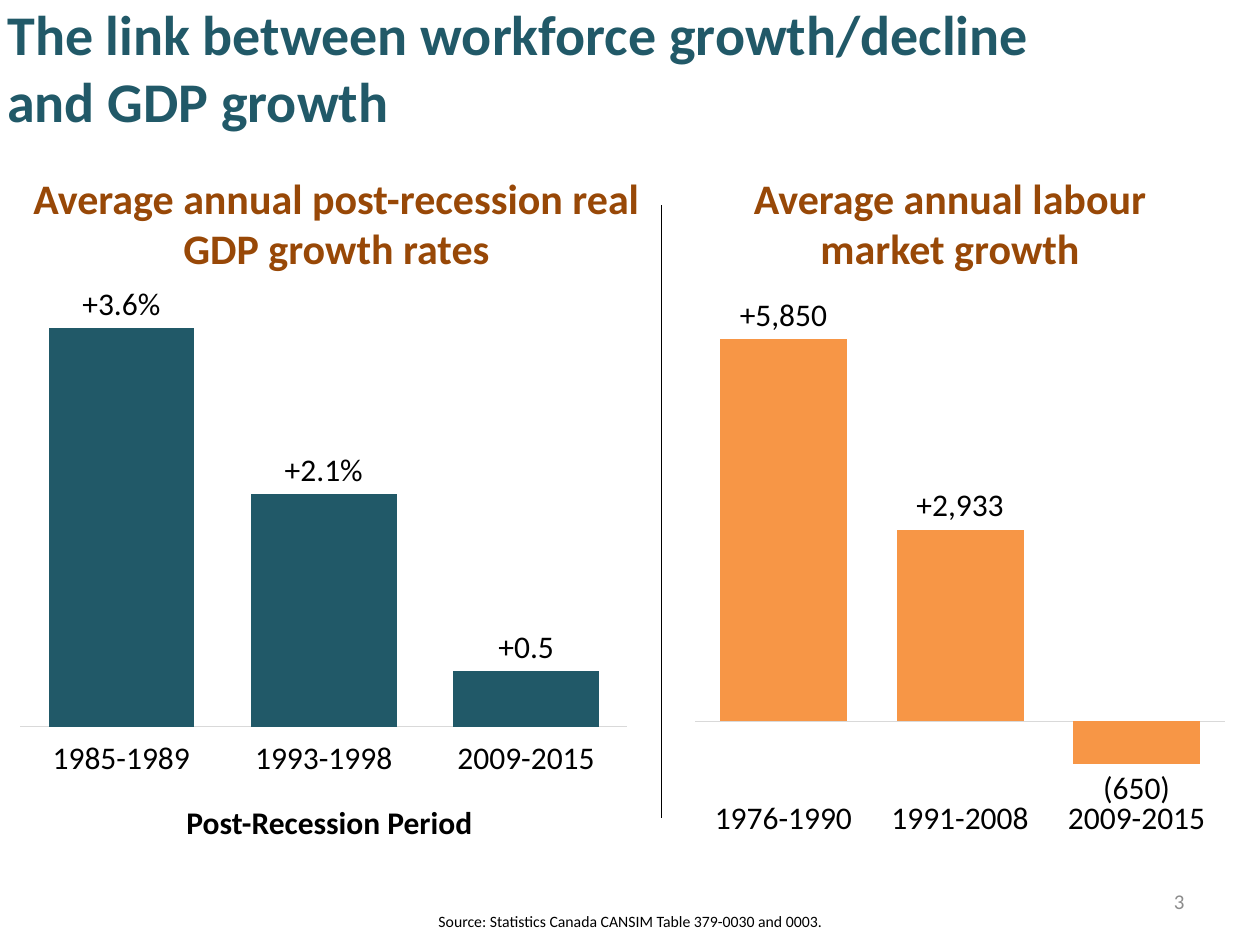
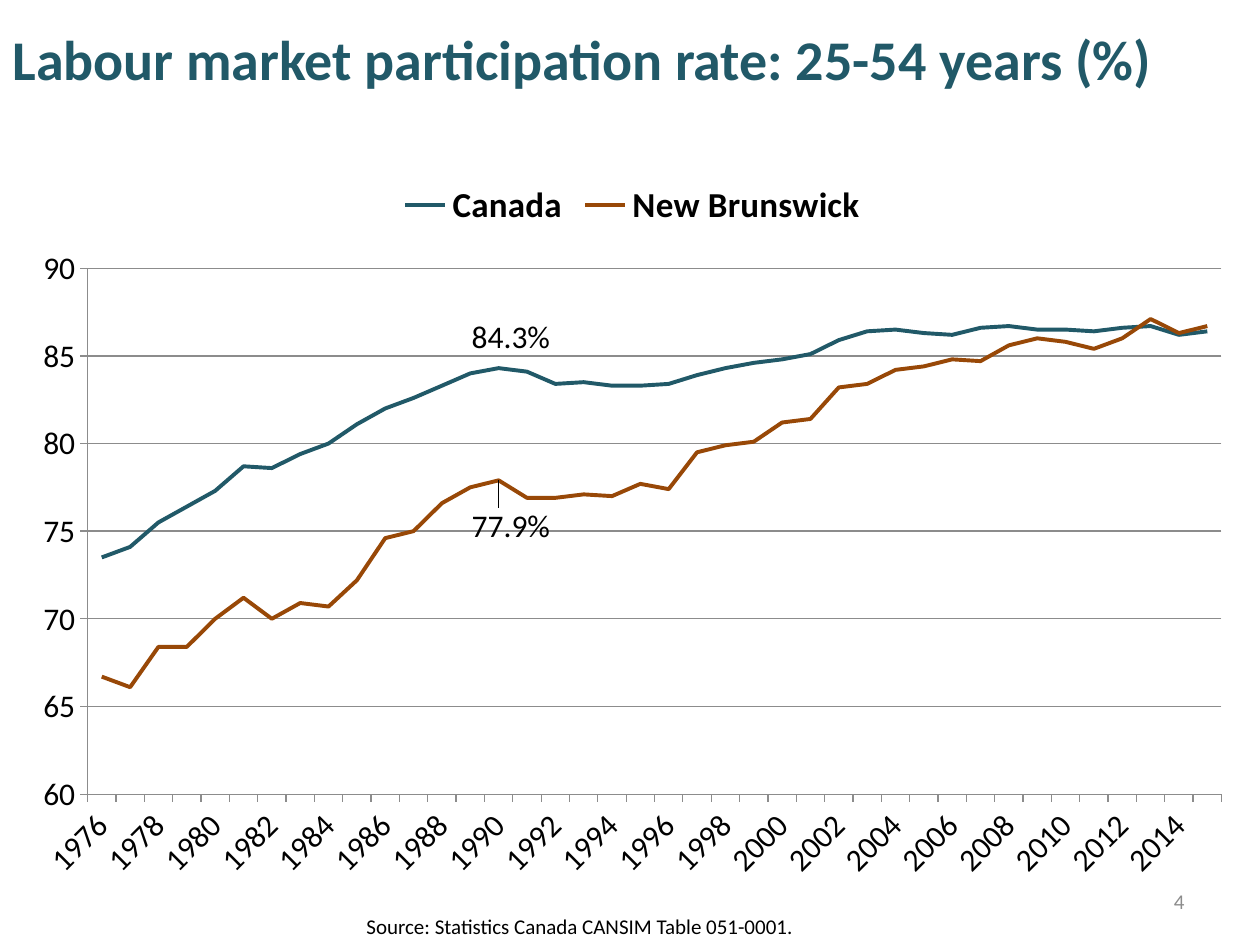
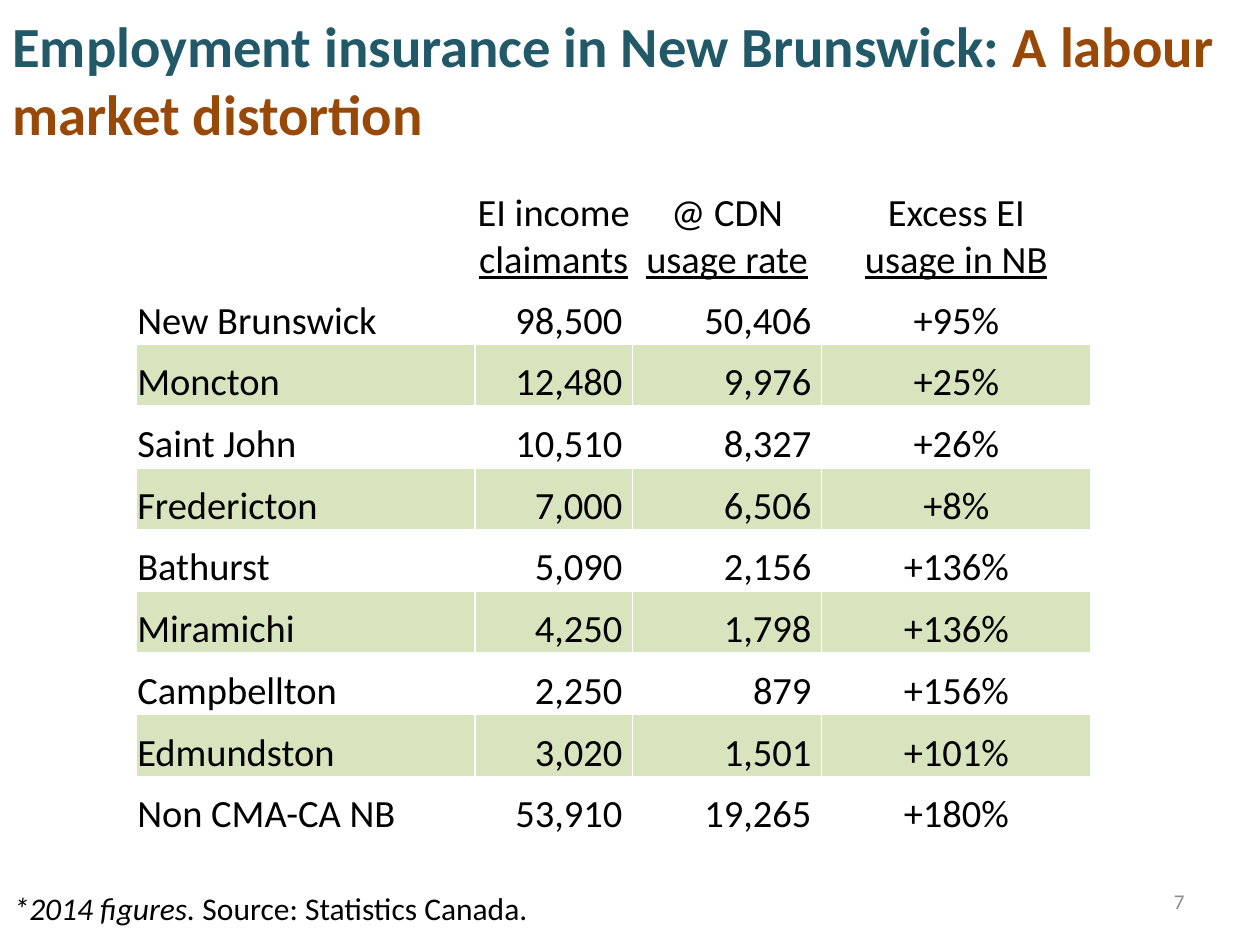
import pptx
import pptx.chart.data
import pptx.dml.color
import pptx.enum.chart
import pptx.enum.shapes
import pptx.enum.text
import pptx.oxml
import pptx.oxml.ns
import pptx.util

Inches = pptx.util.Inches
Pt = pptx.util.Pt
RGBColor = pptx.dml.color.RGBColor
Align = pptx.enum.text.PP_ALIGN
Anchor = pptx.enum.text.MSO_ANCHOR
Kind = pptx.enum.chart.XL_CHART_TYPE
Place = pptx.enum.chart.XL_LABEL_POSITION
Tick = pptx.enum.chart.XL_TICK_MARK

TEAL = RGBColor(0x21, 0x59, 0x68)
RUST = RGBColor(0x98, 0x48, 0x07)
ORANGE = RGBColor(0xF7, 0x96, 0x46)
GREEN = RGBColor(0xD7, 0xE4, 0xBD)
BLACK = RGBColor(0, 0, 0)
GREY = RGBColor(0x8C, 0x8C, 0x8C)
PALE = RGBColor(0xD9, 0xD9, 0xD9)
FONT = "Calibri"
TIGHT = (0.07, 0.04)
LOOSE = (0.1, 0.05)

CANADA = [73.5, 74.1, 75.5, 76.4, 77.3, 78.7, 78.6, 79.4, 80, 81.1,
          82, 82.6, 83.3, 84, 84.3, 84.1, 83.4, 83.5, 83.3, 83.3,
          83.4, 83.9, 84.3, 84.6, 84.8, 85.1, 85.9, 86.4, 86.5, 86.3,
          86.2, 86.6, 86.7, 86.5, 86.5, 86.4, 86.6, 86.7, 86.2, 86.4]
BRUNSWICK = [66.7, 66.1, 68.4, 68.4, 70, 71.2, 70, 70.9, 70.7, 72.2,
             74.6, 75, 76.6, 77.5, 77.9, 76.9, 76.9, 77.1, 77, 77.7,
             77.4, 79.5, 79.9, 80.1, 81.2, 81.4, 83.2, 83.4, 84.2, 84.4,
             84.8, 84.7, 85.6, 86, 85.8, 85.4, 86, 87.1, 86.3, 86.7]

# Each header cell lists its paragraphs, and each paragraph its (text, underline) runs.
HEADS = [
    [],
    [[("EI income ", False), ("claimants", True)]],
    [[("@ CDN ", False), ("usage rate", True)]],
    [[("Excess EI", False)], [("usage in NB", True)]],
]
CLAIMS = [
    ("New Brunswick", "98,500", "50,406", "+95%"),
    ("Moncton", "12,480", "9,976", "+25%"),
    ("Saint John", "10,510", "8,327", "+26%"),
    ("Fredericton", "7,000", "6,506", "+8%"),
    ("Bathurst", "5,090", "2,156", "+136%"),
    ("Miramichi", "4,250", "1,798", "+136%"),
    ("Campbellton", "2,250", "879", "+156%"),
    ("Edmundston", "3,020", "1,501", "+101%"),
    ("Non CMA-CA NB", "53,910", "19,265", "+180%"),
]


def xml(tag, inner="", attrs=""):
    """Make an element with the drawing and chart prefixes declared."""
    names = pptx.oxml.ns.nsdecls("a", "c")
    return pptx.oxml.parse_xml(f"<{tag} {names} {attrs}>{inner}</{tag}>")


def layout(**parts):
    """Make a manual chart layout from x, y, w and h fractions."""
    inner = "".join(f'<c:{key} val="{val}"/>' for key, val in parts.items())
    return xml("c:layout", f"<c:manualLayout>{inner}</c:manualLayout>")


def style(font, size, color=BLACK, **flags):
    font.name = FONT
    font.size = Pt(size)
    font.color.rgb = color
    for name, value in flags.items():
        setattr(font, name, value)


def write(para, text, size, color=BLACK, **flags):
    run = para.add_run()
    run.text = text
    style(run.font, size, color, **flags)


def note(series, index, text, place):
    """Give one chart point its own label text."""
    label = series.points[index].data_label
    write(label.text_frame.paragraphs[0], text, 18)
    label.position = place


def edge(cell):
    """Draw white one-point borders round a cell."""
    props = cell._tc.get_or_add_tcPr()
    white = '<a:solidFill><a:srgbClr val="FFFFFF"/></a:solidFill>'
    for spot, side in enumerate("LRTB"):
        props.insert(spot, xml(f"a:ln{side}", white, 'w="12700"'))


class Deck:
    def __init__(self):
        self.show = pptx.Presentation()
        self.show.slide_width = Inches(10)
        self.show.slide_height = Inches(7.5)

    def page(self, number, at, runs, size=32):
        """Start a slide with its title and its page number."""
        self.slide = self.show.slides.add_slide(self.show.slide_layouts[6])
        self.text(at, [(text, size, color, {"bold": True}) for text, color in runs],
                  anchor=Anchor.MIDDLE)
        self.text((7.17, 6.95, 2.33, 0.4), [(number, 12, GREY, {})],
                  Align.RIGHT, Anchor.MIDDLE)

    def text(self, at, runs, align=Align.LEFT, anchor=Anchor.TOP, pad=LOOSE, wrap=True):
        frame = self.slide.shapes.add_textbox(*map(Inches, at)).text_frame
        frame.word_wrap = wrap
        frame.vertical_anchor = anchor
        frame.margin_left = frame.margin_right = Inches(pad[0])
        frame.margin_top = frame.margin_bottom = Inches(pad[1])
        para = frame.paragraphs[0]
        para.alignment = align
        for text, size, color, flags in runs:
            write(para, text, size, color, **flags)

    def rule(self, x, top, end):
        line = self.slide.shapes.add_connector(
            pptx.enum.shapes.MSO_CONNECTOR.STRAIGHT, *map(Inches, (x, top, x, end)))
        line.line.color.rgb = BLACK
        line.line.width = Pt(0.75)
        line._element.spPr.append(xml("a:effectLst"))

    def chart(self, kind, at, cats, rows):
        data = pptx.chart.data.CategoryChartData()
        data.categories = cats
        for name, values in rows:
            data.add_series(name, values)
        chart = self.slide.shapes.add_chart(kind, *map(Inches, at), data).chart
        chart.has_title = False
        chart.has_legend = False
        style(chart.font, 18)
        for axis in (chart.category_axis, chart.value_axis):
            style(axis.tick_labels.font, 18)
        return chart

    def bars(self, at, cats, values, color, form, notes, low, high):
        chart = self.chart(Kind.COLUMN_CLUSTERED, at, cats, [("Series 1", values)])
        plot = chart.plots[0]
        plot.gap_width = 39
        plot.overlap = -27
        plot.vary_by_categories = False
        base = chart.category_axis
        base.major_tick_mark = Tick.NONE
        base.tick_label_position = pptx.enum.chart.XL_TICK_LABEL_POSITION.LOW
        base.format.line.color.rgb = PALE
        base.format.line.width = Pt(0.75)
        scale = chart.value_axis
        scale.visible = False
        scale.has_major_gridlines = False
        scale.minimum_scale = low
        scale.maximum_scale = high
        series = plot.series[0]
        series.invert_if_negative = False
        series.format.fill.solid()
        series.format.fill.fore_color.rgb = color
        labels = series.data_labels
        labels.show_value = True
        labels.number_format = form
        labels.number_format_is_linked = False
        labels.position = Place.OUTSIDE_END
        style(labels.font, 18)
        for index, text in enumerate(notes):
            note(series, index, text, Place.OUTSIDE_END)

    def lines(self, at, cats, rows, peaks):
        """Draw a line chart; peaks holds index, text, place and shift per series."""
        chart = self.chart(Kind.LINE, at, cats, [row[:2] for row in rows])
        chart.plots[0].vary_by_categories = False
        chart.has_legend = True
        chart.legend.position = pptx.enum.chart.XL_LEGEND_POSITION.TOP
        chart.legend.include_in_layout = False
        style(chart.legend.font, 20, bold=True)
        scale = chart.value_axis
        scale.minimum_scale = 60
        scale.maximum_scale = 90
        scale.major_unit = 5
        scale.has_major_gridlines = True
        base = chart.category_axis
        base._element.txPr.bodyPr.set("rot", "-2700000")
        for axis in (base, scale):
            axis.major_tick_mark = Tick.OUTSIDE
            axis.format.line.color.rgb = GREY
        scale.major_gridlines.format.line.color.rgb = GREY
        area = chart._chartSpace.chart.plotArea
        for old in area.findall(pptx.oxml.ns.qn("c:layout")):
            area.remove(old)
        inner = layout(layoutTarget="inner", xMode="edge", yMode="edge",
                       x=0.056, y=0.139, w=0.924, h=0.726)
        area.insert(0, inner)
        for series, row, peak in zip(chart.plots[0].series, rows, peaks):
            series.smooth = False
            series.format.line.color.rgb = row[2]
            series.data_labels.show_value = False
            index, text, place, shift = peak
            note(series, index, text, place)
            group = series.data_labels._element
            group.find(pptx.oxml.ns.qn("c:dLbl")).insert(1, layout(x=0.01, y=shift))
            group.append(xml(
                "c:extLst",
                '<c:ext uri="{CE6537A1-D6FC-4f65-9D91-7224C49458BB}" '
                'xmlns:c15="http://schemas.microsoft.com/office/drawing/2012/chart">'
                '<c15:showLeaderLines val="1"/></c:ext>'))

    def table(self, at, widths, heads, rows, aligns):
        table = self.slide.shapes.add_table(
            len(rows) + 1, len(widths), *map(Inches, at)).table
        table.first_row = False
        table.horz_banding = False
        for col, width in zip(table.columns, widths):
            col.width = Inches(width)
        for index, row in enumerate(table.rows):
            row.height = Inches(0.49 if index else 0.74)
        plain = [[[[(text, False)]] for text in row] for row in rows]
        for index, row in enumerate([heads] + plain):
            for col, paras in enumerate(row):
                align = aligns[col] if index else Align.CENTER
                shade = index > 0 and index % 2 == 0
                self.cell(table.cell(index, col), paras, align, shade)

    def cell(self, cell, paras, align, shade):
        cell.vertical_anchor = Anchor.BOTTOM
        cell.margin_left = cell.margin_top = Inches(0.01)
        cell.margin_right = Inches(0.08 if align == Align.RIGHT else 0.01)
        cell.margin_bottom = 0
        if shade:
            cell.fill.solid()
            cell.fill.fore_color.rgb = GREEN
        else:
            cell.fill.background()
        edge(cell)
        frame = cell.text_frame
        for index, runs in enumerate(paras):
            para = frame.add_paragraph() if index else frame.paragraphs[0]
            para.alignment = align
            for text, under in runs:
                write(para, text, 22, underline=under)


def growth(deck):
    deck.page("3", (-0.04, -0.06, 8.33, 1.18),
              [("The link between workforce growth/decline and GDP growth", TEAL)])
    deck.text((3.39, 7.2, 3.22, 0.23),
              [("Source: Statistics Canada CANSIM Table 379-0030 and 0003.", 9, BLACK, {})],
              Align.CENTER, pad=TIGHT, wrap=False)
    deck.text((1.41, 6.33, 2.44, 0.38),
              [("Post-Recession Period", 18, BLACK, {"bold": True})],
              pad=TIGHT, wrap=False)
    for left, width, text in (
            (0.09, 5.16, "Average annual post-recession real GDP growth rates"),
            (5.43, 4.22, "Average annual labour market growth")):
        deck.text((left, 1.33, width, 0.88), [(text, 24, RUST, {"bold": True})],
                  Align.CENTER, pad=TIGHT)
    deck.rule(5.25, 1.63, 6.49)
    deck.bars((5.43, 2, 4.38, 4.74), ["1976-1990", "1991-2008", "2009-2015"],
              [5850, 2933, -650], ORANGE, "#,##0;(#,##0)",
              ["+5,850", "+2,933"], -1000, 7000)
    deck.bars((0.06, 2.17, 5.02, 4.08), ["1985-1989", "1993-1998", "2009-2015"],
              [0.036, 0.021, 0.005], TEAL, "0.0%",
              ["+3.6%", "+2.1%", "+0.5"], 0, 0.04)


def labour(deck):
    deck.page("4", (0, 0.14, 9.75, 0.64),
              [("Labour market participation rate: 25-54 years (%)", TEAL)])
    deck.text((2.81, 7.2, 3.69, 0.3),
              [("Source: Statistics Canada CANSIM Table 051-0001.", 12, BLACK, {})],
              wrap=False)
    deck.lines((0.15, 1.33, 9.74, 5.75), [str(year) for year in range(1976, 2016)],
               [("Canada", CANADA, TEAL), ("New Brunswick", BRUNSWICK, RUST)],
               [(14, "84.3%", Place.ABOVE, -0.01), (14, "77.9%", Place.BELOW, 0.03)])


def claims(deck):
    deck.page("7", (0, 0, 10, 1.25),
              [("Employment insurance in New Brunswick: ", TEAL),
               ("A labour market distortion", RUST)], 32.4)
    deck.text((0.01, 7.01, 4.33, 0.4),
              [("*2014 figures. ", 18, BLACK, {"italic": True}),
               ("Source: Statistics Canada.", 18, BLACK, {})], wrap=False)
    deck.table((1.08, 1.5, 7.58, 5.18), (2.69, 1.25, 1.5, 2.14), HEADS, CLAIMS,
               (Align.LEFT, Align.RIGHT, Align.RIGHT, Align.CENTER))


def main():
    deck = Deck()
    growth(deck)
    labour(deck)
    claims(deck)
    deck.show.save("out.pptx")


if __name__ == "__main__":
    main()
